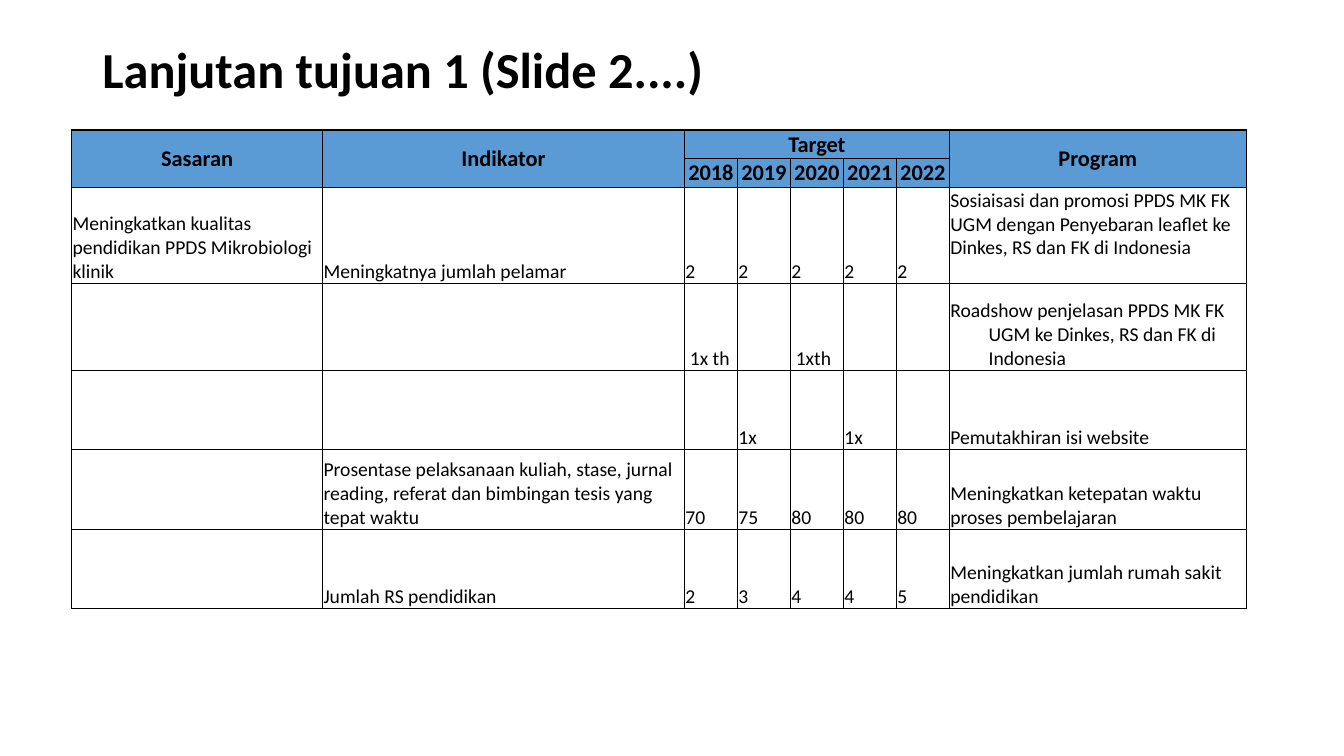
from lxml import etree
from pptx import Presentation
from pptx.dml.color import RGBColor
from pptx.enum import text
from pptx.oxml import ns
from pptx.util import Pt

BLACK = RGBColor(0x00, 0x00, 0x00)
BLUE = RGBColor(0x5B, 0x9B, 0xD5)
FONT = "Calibri"
HANG = 27.36

COLS = [179.3, 258.5] + [37.86] * 5 + [212.1]
ROWS = [20, 20.6, 68.6, 62.2, 56.8, 56.8, 56.8]
HEADER_ROWS = 2
DATA = [
    ["Sasaran", "Indikator", "Target", "", "", "", "", "Program"],
    ["", "", "2018", "2019", "2020", "2021", "2022", ""],
    ["Meningkatkan kualitas pendidikan PPDS Mikrobiologi klinik",
     "Meningkatnya jumlah pelamar", "2", "2", "2", "2", "2",
     "Sosiaisasi dan promosi PPDS MK FK UGM dengan Penyebaran leaflet ke "
     "Dinkes, RS dan FK di Indonesia"],
    ["", "", " 1x th", "", " 1xth", "", "",
     "Roadshow penjelasan PPDS MK FK UGM ke Dinkes, RS dan FK di Indonesia"],
    ["", "", "", "1x", "", "1x", "", "Pemutakhiran isi website"],
    ["", "Prosentase pelaksanaan kuliah, stase, jurnal reading, referat dan "
     "bimbingan tesis yang tepat waktu", "70", "75", "80", "80", "80",
     "Meningkatkan ketepatan waktu proses pembelajaran"],
    ["", "Jumlah RS pendidikan", "2", "3", "4", "4", "5",
     "Meningkatkan jumlah rumah sakit pendidikan"],
]
MERGES = [((0, 0), (1, 0)), ((0, 1), (1, 1)), ((0, 2), (0, 6)), ((0, 7), (1, 7))]
HANGING = [(3, 7), (4, 7)]
RAISED = (2, 7)


def set_font(p, size, bold):
    p.font.name, p.font.size, p.font.bold = FONT, Pt(size), bold
    p.font.color.rgb = BLACK


def add_borders(cell):
    tcPr = cell._tc.get_or_add_tcPr()
    for side in ("a:lnL", "a:lnR", "a:lnT", "a:lnB"):
        ln = etree.SubElement(tcPr, ns.qn(side), w=str(Pt(1)))
        fill = etree.SubElement(ln, ns.qn("a:solidFill"))
        etree.SubElement(fill, ns.qn("a:srgbClr"), val=str(BLACK))


def format_cell(cell, words, header):
    add_borders(cell)
    cell.margin_left = cell.margin_right = cell.margin_top = Pt(0.7)
    cell.margin_bottom = Pt(0)
    p = cell.text_frame.paragraphs[0]
    p.text = words
    if header:
        cell.fill.solid()
        cell.fill.fore_color.rgb = BLUE
        cell.vertical_anchor = text.MSO_ANCHOR.MIDDLE
        p.alignment = text.PP_ALIGN.CENTER
        set_font(p, 16, True)
    else:
        cell.fill.background()
        cell.vertical_anchor = text.MSO_ANCHOR.BOTTOM
        set_font(p, 14, False)


def add_title(s, x, y, w, h):
    sp = s.shapes.title
    sp.left, sp.top, sp.width, sp.height = Pt(x), Pt(y), Pt(w), Pt(h)
    tf = sp.text_frame
    tf.text = "Lanjutan tujuan 1 (Slide 2....)"
    tf.vertical_anchor = text.MSO_ANCHOR.TOP
    p = tf.paragraphs[0]
    p.alignment = text.PP_ALIGN.LEFT
    p.line_spacing = 0.9
    set_font(p, 36, True)


def add_target_table(s, x, y):
    tbl = s.shapes.add_table(len(ROWS), len(COLS), Pt(x), Pt(y),
                             Pt(sum(COLS)), Pt(sum(ROWS))).table
    tbl.first_row = tbl.horz_banding = False
    for col, width in zip(tbl.columns, COLS):
        col.width = Pt(width)
    for row, height in zip(tbl.rows, ROWS):
        row.height = Pt(height)
    for i, line in enumerate(DATA):
        for j, words in enumerate(line):
            format_cell(tbl.cell(i, j), words, i < HEADER_ROWS)

    # Hanging indents and the raised programme text
    for i, j in HANGING:
        pPr = tbl.cell(i, j).text_frame.paragraphs[0]._p.get_or_add_pPr()
        pPr.set("marL", str(Pt(HANG)))
        pPr.set("indent", str(Pt(-HANG)))
    tbl.cell(*RAISED).margin_bottom = Pt(16.5)

    # Header cells that span rows or columns
    for first, last in MERGES:
        tbl.cell(*first).merge(tbl.cell(*last))


def main():
    prs = Presentation()
    prs.slide_width, prs.slide_height = Pt(960), Pt(540)
    s = prs.slides.add_slide(prs.slide_layouts[5])
    add_title(s, 66, 28.8, 828, 78.5)
    add_target_table(s, 51.1, 92.9)
    prs.save("out.pptx")


if __name__ == "__main__":
    main()
